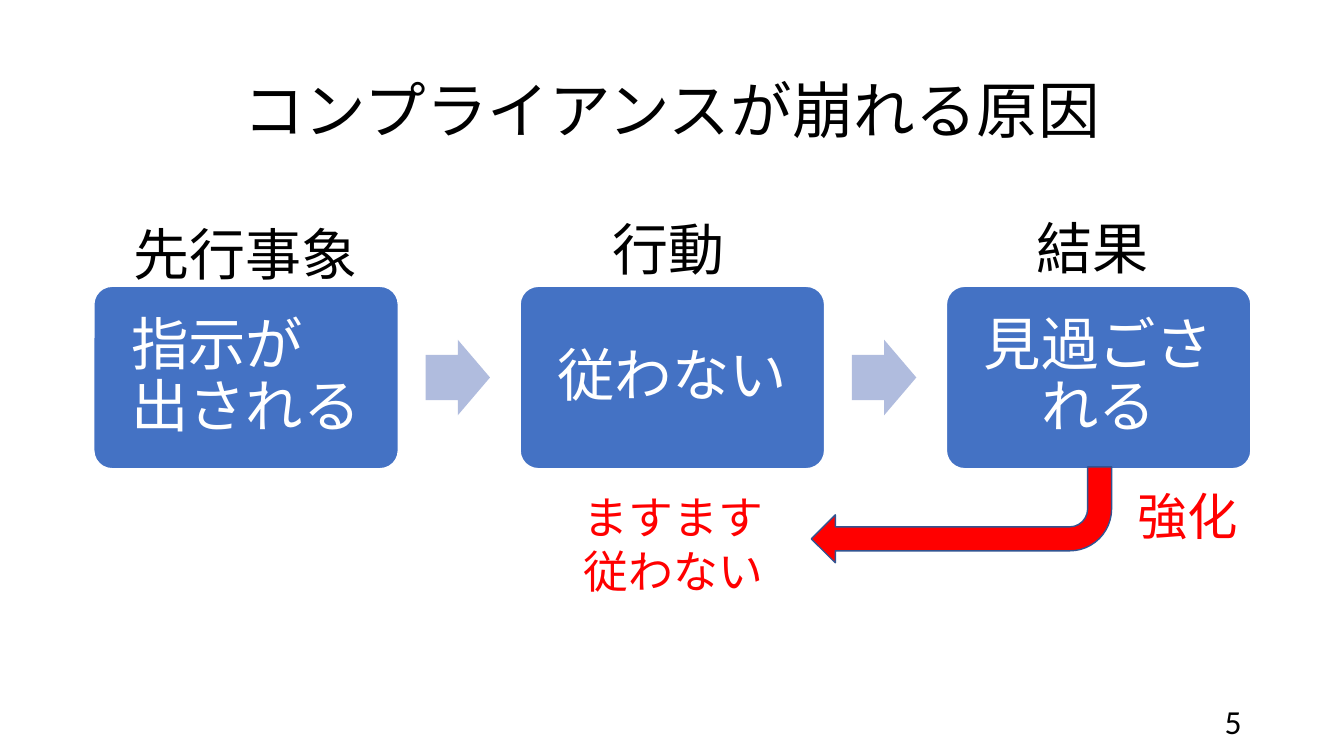
import pptx
import pptx.util
import pptx.dml.color
import pptx.enum.shapes
import pptx.enum.text
import lxml.etree

Pt = pptx.util.Pt
SHAPE = pptx.enum.shapes.MSO_SHAPE
ALIGN = pptx.enum.text.PP_ALIGN
ANCHOR = pptx.enum.text.MSO_ANCHOR

COLORS = {
    "text": "000000",
    "paper": "FFFFFF",
    "step": "4472C4",
    "step_arrow": "B0BCDE",
    "feedback": "FF0000",
    "feedback_line": "325491",
}
JAPANESE = "Noto Sans CJK JP"
LATIN = "Calibri"
DRAWING_NS = "{http://schemas.openxmlformats.org/drawingml/2006/main}"

# Heading, its shift from the box centre, its top above the box, box text
STEPS = [
    ("先行事象", -0.5, 51, "指示が　出される"),
    ("行動", -3, 55, "従わない"),
    ("結果", -4.5, 55.5, "見過ごされる"),
]


def rgb(name):
    return pptx.dml.color.RGBColor.from_string(COLORS[name])


def write(shape, lines, size, color="text", font=JAPANESE, align=ALIGN.CENTER,
          anchor=ANCHOR.TOP, spacing=1.0):
    frame = shape.text_frame
    frame.word_wrap = True
    frame.vertical_anchor = anchor
    frame.text = "\n".join(lines)
    for paragraph in frame.paragraphs:
        paragraph.alignment = align
        paragraph.line_spacing = spacing
        paragraph.font.size = Pt(size)
        paragraph.font.color.rgb = rgb(color)
        paragraph.font.name = font
        defaults = paragraph._p.pPr.find(DRAWING_NS + "defRPr")
        lxml.etree.SubElement(defaults, DRAWING_NS + "ea", typeface=JAPANESE)


def add_text(slide, box, lines, size, **style):
    write(slide.shapes.add_textbox(*map(Pt, box)), lines, size, **style)


def add_filled(slide, kind, box, fill, line=None):
    shape = slide.shapes.add_shape(kind, *map(Pt, box))
    shape.shadow.inherit = False
    shape.fill.solid()
    shape.fill.fore_color.rgb = rgb(fill)
    if line:
        shape.line.color.rgb = rgb(line)
        shape.line.width = Pt(1)
    else:
        shape.line.fill.background()
    return shape


def add_title(slide, box, wording):
    title = slide.shapes.title
    title.left, title.top, title.width, title.height = map(Pt, box)
    write(title, [wording], 44, anchor=ANCHOR.MIDDLE, spacing=0.9)


def add_step(slide, box, heading, shift, rise, wording):
    left, top, width, height = box
    step = add_filled(slide, SHAPE.ROUNDED_RECTANGLE, box, "step", "paper")
    step.adjustments[0] = 0.1
    write(step, [wording], 41, color="paper", font=LATIN,
          anchor=ANCHOR.MIDDLE, spacing=0.9)
    frame = step.text_frame
    frame.margin_left = frame.margin_right = Pt(14)
    frame.margin_top = frame.margin_bottom = Pt(14)
    add_text(slide, (left + shift + 6, top - rise, width - 12, 55.5), [heading], 40)


def add_process(slide, box):
    """Three equal steps across the box, with an arrow in each gap."""
    left, top, width, height = box
    step_width, arrow_width, arrow_height = 217.5, 46, 54
    pitch = (width - step_width) / (len(STEPS) - 1)
    for index, step in enumerate(STEPS):
        x = left + index * pitch
        add_step(slide, (x, top, step_width, height), *step)
        if index < len(STEPS) - 1:
            arrow_box = (x + step_width + (pitch - step_width - arrow_width) / 2 - 1,
                         top + (height - arrow_height) / 2, arrow_width, arrow_height)
            arrow = add_filled(slide, SHAPE.RIGHT_ARROW, arrow_box, "step_arrow")
            arrow.adjustments[0] = 0.6


def add_feedback(slide, box):
    """Red arrow from the result back to the behaviour, with its two captions."""
    left, top, width, height = box
    add_text(slide, (left, top + 13, 196.5, 85), ["ますます", "従わない"], 32,
             color="feedback")
    arrow = add_filled(slide, SHAPE.BENT_ARROW, (left + 196.5, top, 214.5, 68.5),
                       "feedback", "feedback_line")
    arrow.rotation = 180
    add_text(slide, (left + width - 90, top + 9.5, 90, 51), ["強化"], 36,
             color="feedback")


def main():
    deck = pptx.Presentation()
    deck.slide_width, deck.slide_height = Pt(960), Pt(540)
    slide = deck.slides.add_slide(deck.slide_layouts[5])
    add_title(slide, (66, 28.75, 828, 104.4), "コンプライアンスが崩れる原因")
    add_process(slide, (67, 204.5, 826.5, 130.3))
    add_feedback(slide, (383, 333.5, 510.5, 98))
    add_text(slide, (678, 500.5, 216, 28.75), ["5"], 24, font=LATIN,
             align=ALIGN.RIGHT, anchor=ANCHOR.MIDDLE)
    deck.save("out.pptx")


if __name__ == "__main__":
    main()
